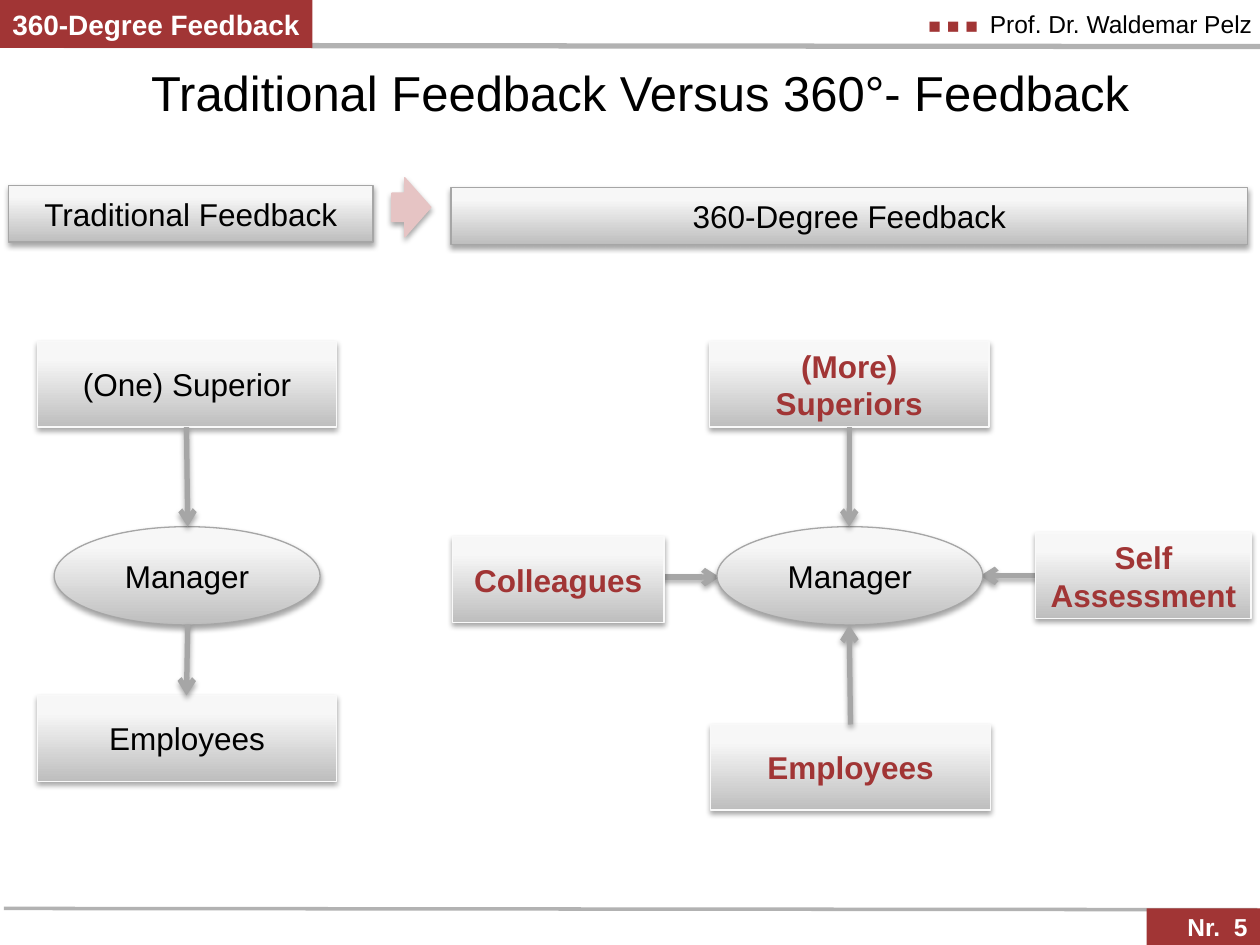
import copy
from dataclasses import dataclass

import pptx
import pptx.dml.color
import pptx.enum.shapes
import pptx.enum.text
import pptx.oxml
import pptx.oxml.ns
import pptx.util

SHAPE = pptx.enum.shapes.MSO_SHAPE
ALIGN = pptx.enum.text.PP_ALIGN
ANCHOR = pptx.enum.text.MSO_ANCHOR
AUTO = pptx.enum.text.MSO_AUTO_SIZE
SCALE = 9144  # EMU per px, 100 px to the inch

SHADOW = (
    '<a:outerShdw %s blurRad="40000" dist="23000" dir="5400000" rotWithShape="0">'
    '<a:srgbClr val="000000"><a:alpha val="35000"/></a:srgbClr></a:outerShdw>'
    % pptx.oxml.ns.nsdecls("a"))


@dataclass(frozen=True)
class Theme:
    font: str = "Arial"
    red: str = "A13535"
    pink: str = "E6C4C4"
    black: str = "000000"
    white: str = "FFFFFF"
    rule: str = "B2B2B2"
    gray: str = "A6A6A6"
    pale: str = "F9F9F9"
    gradient: tuple = ((0, "BEBEBE"), (0.8, "F7F7F7"), (1, "F8F8F8"))
    title: int = 28
    label: int = 18
    badge: int = 16
    small: int = 14
    marks: int = 12


def px(*values):
    return [pptx.util.Emu(v * SCALE) for v in values]


def rgb(value):
    return pptx.dml.color.RGBColor.from_string(value)


class SlideBuilder:
    def __init__(self, s, theme):
        self.s = s
        self.t = theme

    def style_run(self, r, size, color, bold=False):
        r.font.name = self.t.font
        r.font.size = pptx.util.Pt(size)
        r.font.bold = bold
        r.font.color.rgb = rgb(color)

    def set_text(self, sp, text, size, color, bold=False, align=ALIGN.CENTER, wrap=False):
        tf = sp.text_frame
        tf.text = text
        tf.word_wrap = wrap
        tf.auto_size = AUTO.NONE
        tf.vertical_anchor = ANCHOR.MIDDLE
        for p in tf.paragraphs:
            p.alignment = align
            for r in p.runs:
                self.style_run(r, size, color, bold)

    def set_shadow(self, sp, visible):
        effects = pptx.oxml.ns.qn("a:effectLst")
        sp._element.spPr.append(sp._element.makeelement(effects, {}))
        if visible:
            sp._element.spPr.find(effects).append(pptx.oxml.parse_xml(SHADOW))

    def title(self, text, box):
        sp = self.s.shapes.title
        sp.left, sp.top, sp.width, sp.height = px(*box)
        self.set_text(sp, text, self.t.title, self.t.black, wrap=True)

    def badge(self, text, box, size, align):
        sp = self.s.shapes.add_shape(SHAPE.RECTANGLE, *px(*box))
        sp.fill.solid()
        sp.fill.fore_color.rgb = rgb(self.t.red)
        sp.line.fill.background()
        self.set_shadow(sp, False)
        self.set_text(sp, text, size, self.t.white, True, align)

    def author(self, marks, name, box):
        sp = self.s.shapes.add_textbox(*px(*box))
        tf = sp.text_frame
        tf.word_wrap = True
        tf.margin_left, tf.margin_top, tf.margin_right, tf.margin_bottom = px(10, 1, 0, 1)
        p = tf.paragraphs[0]
        p.alignment = ALIGN.RIGHT
        for text, size, color in ((marks, self.t.marks, self.t.red),
                                  (name, self.t.small, self.t.black)):
            r = p.add_run()
            r.text = text
            self.style_run(r, size, color)

    def node(self, text, box, outline, kind=SHAPE.RECTANGLE, accent=False):
        sp = self.s.shapes.add_shape(kind, *px(*box))
        sp.fill.gradient()
        sp.fill.gradient_angle = 90
        stops = sp._element.spPr.find(".//" + pptx.oxml.ns.qn("a:gsLst"))
        stops.append(copy.deepcopy(stops[0]))
        for stop, (position, color) in zip(sp.fill.gradient_stops, self.t.gradient):
            stop.position = position
            stop.color.rgb = rgb(color)
        sp.line.color.rgb = rgb(outline)
        sp.line.width = pptx.util.Pt(0.75)
        self.set_shadow(sp, True)
        self.set_text(sp, text, self.t.label, self.t.red if accent else self.t.black, accent)

    def block_arrow(self, box):
        sp = self.s.shapes.add_shape(SHAPE.DOWN_ARROW, *px(*box))
        sp.rotation = 270
        sp.adjustments[0], sp.adjustments[1] = 0.48, 0.67
        sp.fill.solid()
        sp.fill.fore_color.rgb = rgb(self.t.pink)
        sp.line.color.rgb = rgb(self.t.pink)
        sp.line.width = pptx.util.Pt(0.75)
        self.set_shadow(sp, True)

    def line(self, ends, color, width, arrow=False):
        cn = self.s.shapes.add_connector(pptx.enum.shapes.MSO_CONNECTOR.STRAIGHT, *px(*ends))
        cn.line.color.rgb = rgb(color)
        cn.line.width = pptx.util.Pt(width)
        if arrow:
            cn.line._get_or_add_ln().append(pptx.oxml.parse_xml(
                '<a:tailEnd %s type="arrow"/>' % pptx.oxml.ns.nsdecls("a")))
        self.set_shadow(cn, arrow)


def main():
    prs = pptx.Presentation()
    prs.slide_width, prs.slide_height = px(1000, 750)
    t = Theme()
    b = SlideBuilder(prs.slides.add_slide(prs.slide_layouts[5]), t)

    # Header and footer
    b.line((27, 36, 1000, 37), t.rule, 3)
    b.badge("360-Degree Feedback", (0, 0, 248, 38), t.badge, ALIGN.LEFT)
    b.line((3, 721, 998, 722), t.rule, 2)
    b.author("■ ■ ■  ", "Prof. Dr. Waldemar Pelz", (703, 6, 291, 26))
    b.badge("Nr.  5", (910, 721, 90, 29), t.small, ALIGN.RIGHT)
    b.title("Traditional Feedback Versus 360°- Feedback", (83, 48, 850, 50))

    # Column headings
    b.node("Traditional Feedback", (7, 147, 289, 45), t.gray)
    b.node("360-Degree Feedback", (358, 149, 632, 45), t.gray)
    b.block_arrow((303, 149, 47, 31))

    # Side arrows start underneath their boxes
    for ends in ((879, 457, 778, 457), (469, 458, 571, 458)):
        b.line(ends, t.gray, 3, arrow=True)

    # Feedback givers and receivers
    for text, left, top, width, accent in (
            ("(One) Superior", 30, 271, 237, False),
            ("Employees", 30, 552, 237, False),
            ("(More)\nSuperiors", 563, 271, 222, True),
            ("Employees", 564, 575, 222, True),
            ("Colleagues", 359, 426, 168, True),
            ("Self\nAssessment", 822, 423, 171, True)):
        b.node(text, (left, top, width, 68), t.pale, accent=accent)
    for left in (43, 569):
        b.node("Manager", (left, 418, 211, 78), t.gray, SHAPE.OVAL)

    # Vertical arrows
    for ends in ((148, 339, 149, 418), (149, 496, 148, 552),
                 (674, 339, 674, 418), (675, 575, 674, 496)):
        b.line(ends, t.gray, 3, arrow=True)

    prs.save("out.pptx")


if __name__ == "__main__":
    main()
